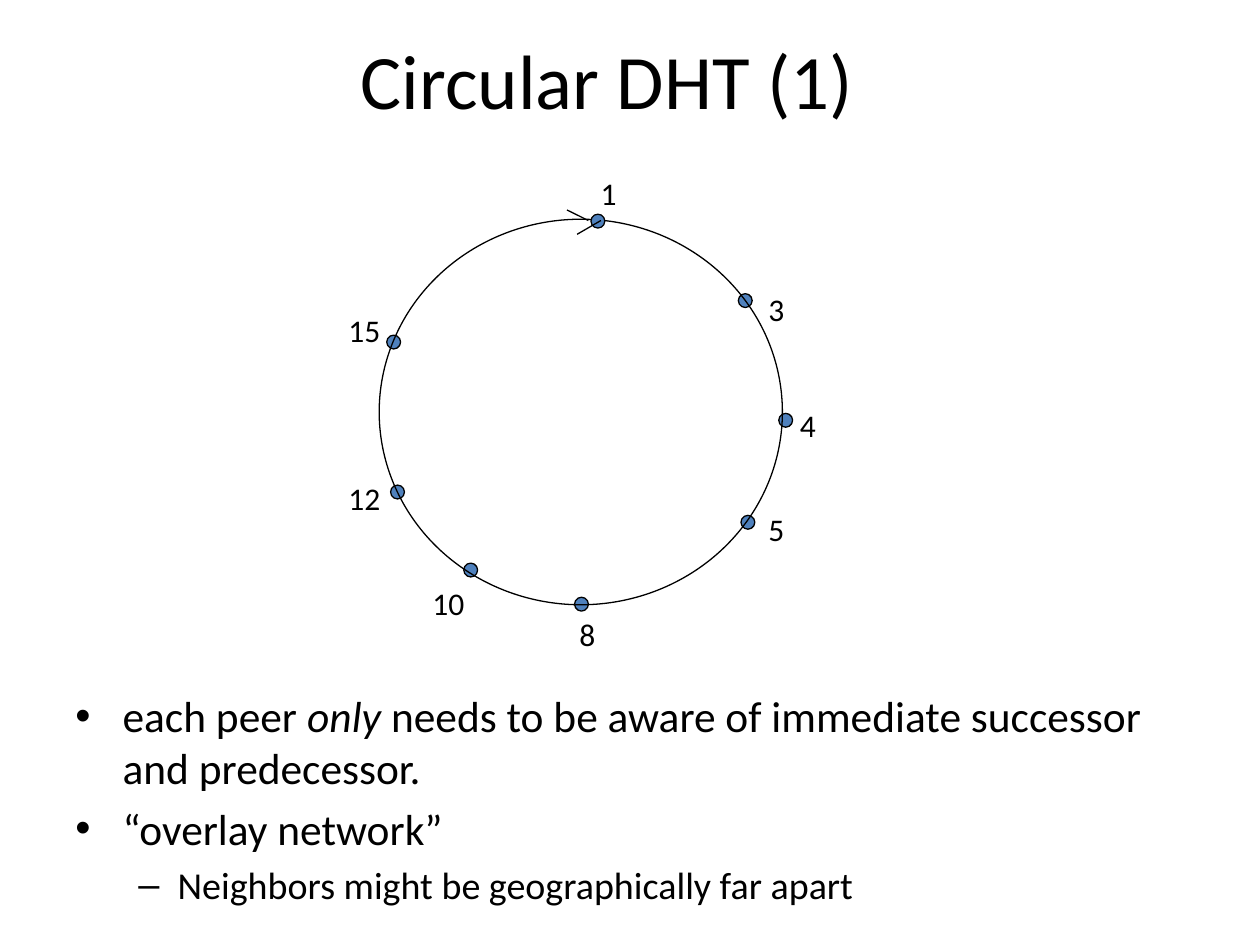
from dataclasses import dataclass

from lxml.etree import SubElement
from pptx import Presentation
from pptx.dml.color import RGBColor
from pptx.enum.shapes import MSO_CONNECTOR, MSO_SHAPE
from pptx.enum.text import MSO_ANCHOR, MSO_AUTO_SIZE, PP_ALIGN
from pptx.oxml.ns import qn
from pptx.util import Pt


@dataclass(frozen=True)
class Theme:
    font: str = "Calibri"
    ink: RGBColor = RGBColor(0x00, 0x00, 0x00)
    peer: RGBColor = RGBColor(0x4F, 0x81, 0xBD)
    title: float = 44
    body: float = 24.8
    sub: float = 21.7
    label: float = 18
    line: float = 0.75


@dataclass(frozen=True)
class Peer:
    name: str
    dot: tuple[float, float]
    label: tuple[float, float]
    width: float = 26


@dataclass(frozen=True)
class Bullet:
    runs: tuple[tuple[str, bool], ...]
    size: float
    mark: str = "•"
    level: int = 0
    indent: float = 27
    hang: float = 27


THEME = Theme()
DOT = 7.9
FIRST = Peer("1", (337.7, 122.4), (336.2, 95.8), 23)
PEERS = (
    Peer("3", (421.9, 167.8), (432, 162)),
    Peer("4", (445, 236.2), (450, 228.2)),
    Peer("5", (423.4, 294.5), (432, 288)),
    Peer("8", (328.3, 341.3), (324, 348)),
    Peer("10", (265, 321.8), (240, 330), 34),
    Peer("12", (223.2, 277.2), (192, 270), 34),
    Peer("15", (221, 191.5), (192, 174), 34),
)
ARROW = (
    ((324, 120), (336.2, 126)),
    ((343.4, 126), (329.8, 133.9)),
)
BULLETS = (
    Bullet((("each peer ", False), ("only", True),
            (" needs to be aware of immediate successor and predecessor.", False)),
           THEME.body),
    Bullet((("“overlay network”", False),), THEME.body),
    Bullet((("Neighbors might be geographically far apart", False),),
           THEME.sub, "–", 1, 58.5, 22.5),
)


def apply(obj, values: dict) -> None:
    for name, value in values.items():
        setattr(obj, name, value)


def add_run(p, text: str, size: float, italic: bool = False) -> None:
    r = p.add_run()
    r.text = text
    apply(r.font, {"name": THEME.font, "size": Pt(size), "italic": italic})
    r.font.color.rgb = THEME.ink


def add_text(s, x: float, y: float, w: float, h: float, **frame):
    tf = s.shapes.add_textbox(Pt(x), Pt(y), Pt(w), Pt(h)).text_frame
    apply(tf, {"word_wrap": True} | frame)
    return tf


def add_ellipse(s, x: float, y: float, w: float, h: float,
                fill: RGBColor | None = None) -> None:
    sp = s.shapes.add_shape(MSO_SHAPE.OVAL, Pt(x), Pt(y), Pt(w), Pt(h))
    sp.shadow.inherit = False
    if fill is None:
        sp.fill.background()
    else:
        sp.fill.solid()
        sp.fill.fore_color.rgb = fill
    sp.line.color.rgb = THEME.ink
    sp.line.width = Pt(THEME.line)


def add_dot(s, peer: Peer) -> None:
    add_ellipse(s, *peer.dot, DOT, DOT, THEME.peer)


def add_label(s, peer: Peer) -> None:
    tf = add_text(s, *peer.label, peer.width, 29, word_wrap=False,
                  auto_size=MSO_AUTO_SIZE.SHAPE_TO_FIT_TEXT)
    add_run(tf.paragraphs[0], peer.name, THEME.label)


def add_line(s, start: tuple[float, float], end: tuple[float, float]) -> None:
    cx = s.shapes.add_connector(MSO_CONNECTOR.STRAIGHT,
                                *(Pt(v) for v in start + end))
    cx.line.color.rgb = THEME.ink
    cx.line.width = Pt(THEME.line)
    SubElement(cx._element.spPr, qn("a:effectLst"))


def add_bullet(p, bullet: Bullet) -> None:
    apply(p, {"level": bullet.level, "space_before": Pt(bullet.size * 0.2)})
    pPr = p._p.get_or_add_pPr()
    pPr.set("marL", str(Pt(bullet.indent)))
    pPr.set("indent", str(-Pt(bullet.hang)))
    SubElement(pPr, qn("a:buFont")).set("typeface", "Arial")
    SubElement(pPr, qn("a:buChar")).set("char", bullet.mark)
    for text, italic in bullet.runs:
        add_run(p, text, bullet.size, italic)


def main() -> None:
    prs = Presentation()
    apply(prs, {"slide_width": Pt(720), "slide_height": Pt(540)})
    s = prs.slides.add_slide(prs.slide_layouts[6])

    for peer in PEERS:
        add_dot(s, peer)
    add_ellipse(s, 216.7, 125.3, 230.4, 220.3)
    for peer in (FIRST, *PEERS):
        add_label(s, peer)
    add_dot(s, FIRST)
    for start, end in ARROW:
        add_line(s, start, end)

    p = add_text(s, 41, 0, 612, 90,
                 vertical_anchor=MSO_ANCHOR.MIDDLE).paragraphs[0]
    p.alignment = PP_ALIGN.CENTER
    add_run(p, "Circular DHT (1)", THEME.title)

    tf = add_text(s, 36, 390.2, 648, 120.2)
    for i, bullet in enumerate(BULLETS):
        add_bullet(tf.add_paragraph() if i else tf.paragraphs[0], bullet)

    prs.save("out.pptx")


if __name__ == "__main__":
    main()
